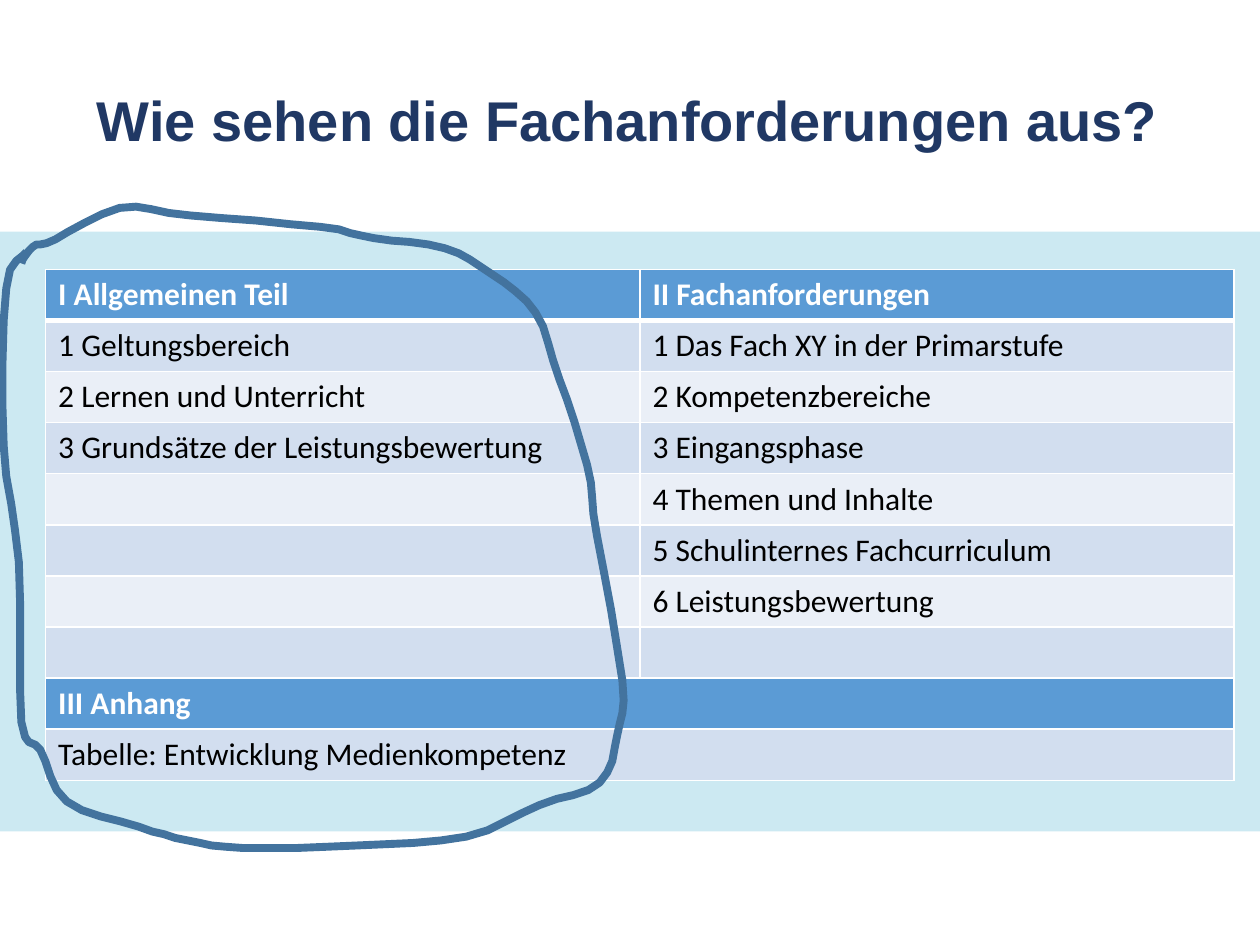
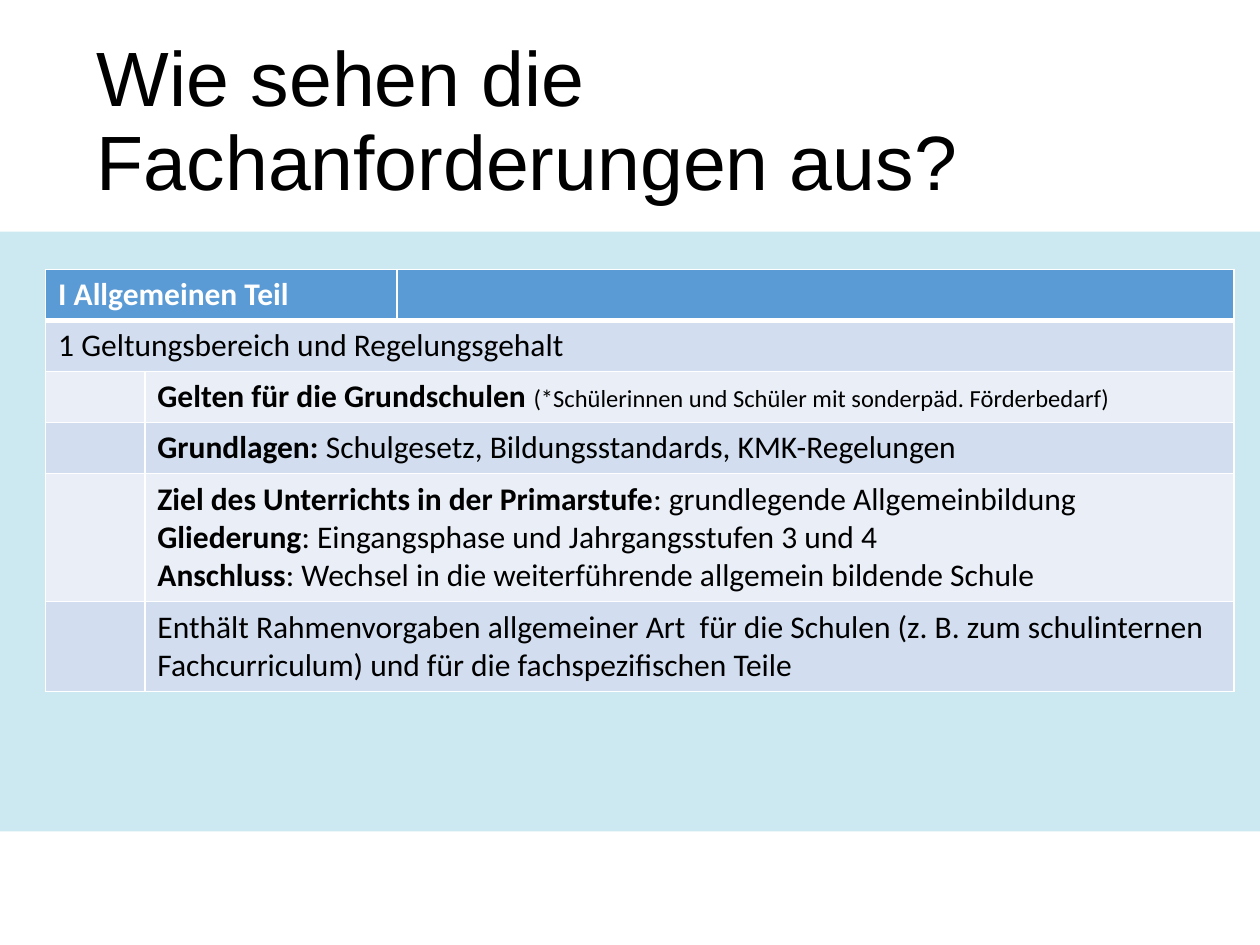
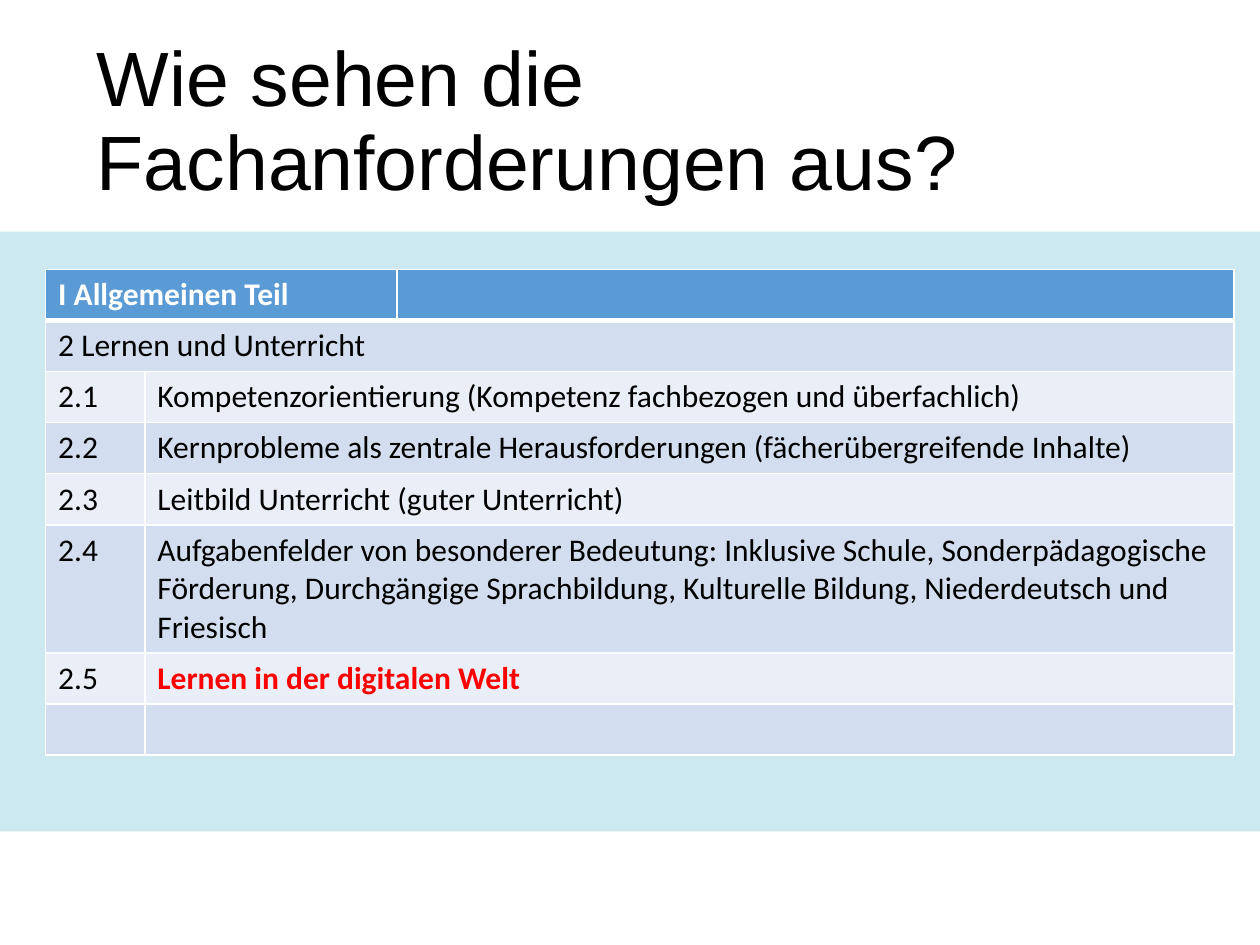
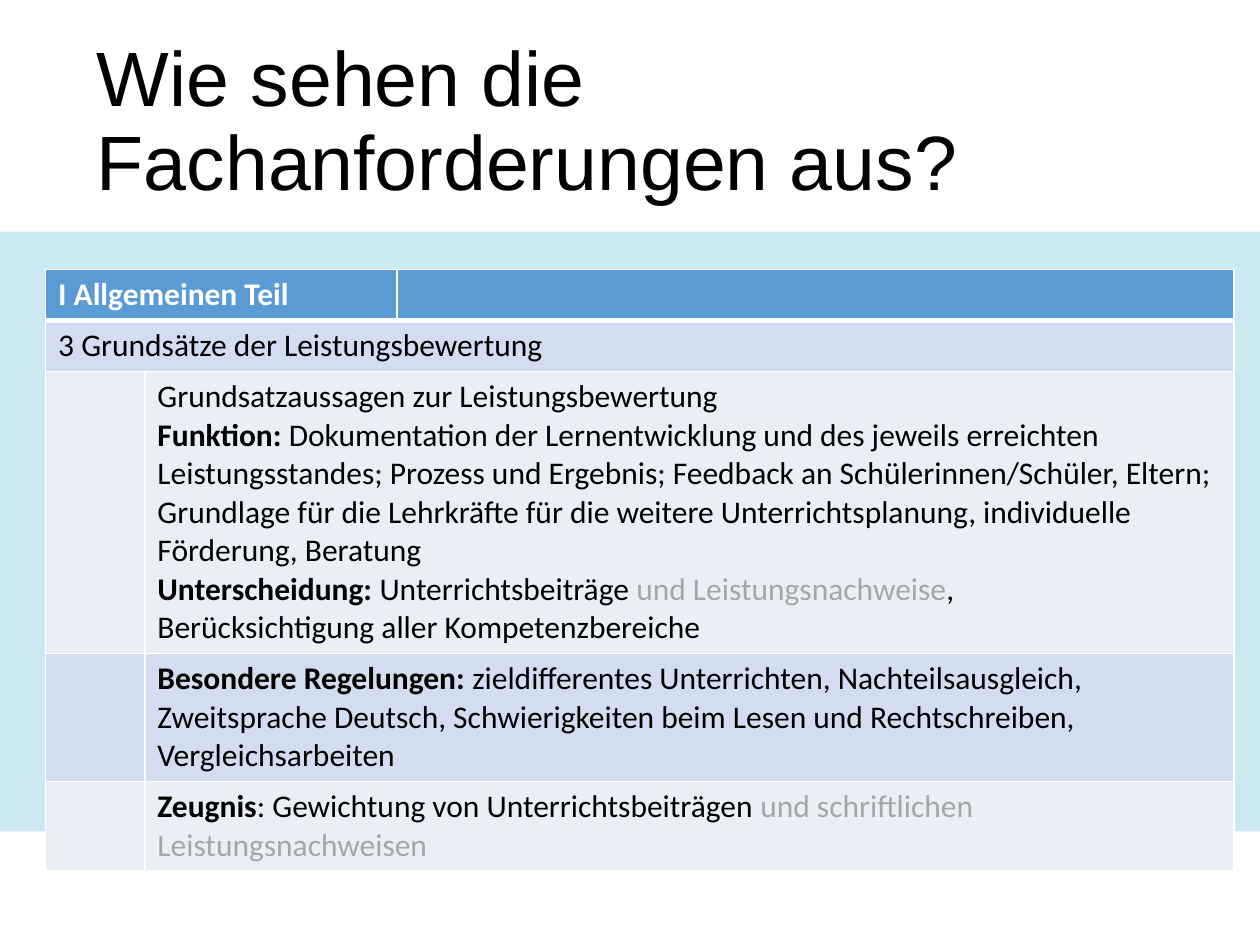
from typing import NamedTuple, Optional

from lxml.etree import SubElement
from pptx import Presentation
from pptx.dml.color import RGBColor
from pptx.enum.shapes import MSO_SHAPE as Shape
from pptx.enum.text import MSO_ANCHOR as Anchor, MSO_AUTO_SIZE as AutoSize, PP_ALIGN as Align
from pptx.oxml.ns import qn
from pptx.util import Cm, Pt

WHITE = RGBColor(0xFF, 0xFF, 0xFF)
BLACK = RGBColor(0x00, 0x00, 0x00)
NAVY = RGBColor(0x20, 0x38, 0x64)
RED = RGBColor(0xFF, 0x00, 0x00)
GREY = RGBColor(0xA6, 0xA6, 0xA6)
BAND_BLUE = RGBColor(0xCC, 0xE9, 0xF2)
HEADER_BLUE = RGBColor(0x5B, 0x9B, 0xD5)
ROW_DARK = RGBColor(0xD2, 0xDE, 0xEF)
ROW_LIGHT = RGBColor(0xEA, 0xEF, 0xF7)
PEN_BLUE = RGBColor(0x43, 0x73, 0x9E)

TITLE = "Wie sehen die Fachanforderungen aus?"
PART_ONE = "I Allgemeinen Teil"
HALVES = (11.98, 11.98)
OUTLINE = (2, 5.08, 16.88)
ROW_HEIGHT = 1.03


class Span(NamedTuple):
    text: str
    bold: bool = False
    color: Optional[RGBColor] = None
    size: float = 18


def bold(text, color=None):
    return Span(text, True, color)


def smooth_curve(points, steps=4):
    """Run a Catmull-Rom spline through the points."""
    padded = [points[0], *points, points[-1]]
    curve = [points[0]]
    for quad in zip(padded, padded[1:], padded[2:], padded[3:]):
        for step in range(1, steps + 1):
            t = step / steps
            curve.append(tuple(
                b + t / 2 * (c - a + t * (2 * a - 5 * b + 4 * c - d + t * (3 * (b - c) + d - a)))
                for a, b, c, d in zip(*quad)))
    return curve


class Deck:
    def __init__(self):
        self.deck = Presentation()
        self.deck.slide_width, self.deck.slide_height = Cm(25.4), Cm(19.05)
        self.layout = self.deck.slide_layouts[5]
        self.page = None
        title = self.layout.placeholders[0]
        title.left, title.top, title.width, title.height = Cm(1.7), Cm(0.64), Cm(22), Cm(3.7)

    def add_page(self, size=44, color=BLACK, is_bold=False):
        self.page = self.deck.slides.add_slide(self.layout)
        if len(self.deck.slides) == 1:
            self.move_band_to_layout()
        frame = self.page.shapes.title.text_frame
        frame.word_wrap = True
        frame.auto_size = AutoSize.NONE
        frame.vertical_anchor = Anchor.MIDDLE
        para = frame.paragraphs[0]
        para.alignment = Align.LEFT
        para.line_spacing = 0.9
        self.add_span(para, Span(TITLE, is_bold, color, size), "Arial", color)

    def move_band_to_layout(self):
        """Draw the band on the first page, then hand it to the layout all pages share."""
        band = self.page.shapes.add_shape(Shape.RECTANGLE, 0, Cm(4.67), Cm(25.4), Cm(12.09))
        band.shadow.inherit = False
        band.fill.solid()
        band.fill.fore_color.rgb = BAND_BLUE
        band.line.fill.background()
        self.layout.shapes.element.insert(2, band.element)

    def add_span(self, para, span, font_name, color):
        run = para.add_run()
        run.text = span.text.rstrip("\n")
        run.font.name = font_name
        run.font.size = Pt(span.size)
        run.font.bold = span.bold
        run.font.color.rgb = span.color or color
        if span.text.endswith("\n"):
            para.add_line_break()

    def fill_cell(self, cell, content, is_header):
        """Content is plain text or a list of paragraphs, each a list of spans."""
        if isinstance(content, str):
            content = [[Span(content, is_header)]] if content else []
        frame = cell.text_frame
        for number, spans in enumerate(content):
            para = frame.add_paragraph() if number else frame.paragraphs[0]
            for span in spans:
                self.add_span(para, span, "Calibri", WHITE if is_header else BLACK)

    def add_table(self, widths, rows, height, headers=(0,)):
        """A None in a row joins that cell to the one on its left."""
        frame = self.page.shapes.add_table(
            len(rows), len(widths), Cm(0.92), Cm(5.43), Cm(sum(widths)), Cm(height))
        table = frame.table
        for column, width in zip(table.columns, widths):
            column.width = Cm(width)
        for r, row in enumerate(rows):
            table.rows[r].height = Cm(ROW_HEIGHT)
            is_header = r in headers
            for c, content in enumerate(row):
                cell = table.cell(r, c)
                cell.fill.solid()
                cell.fill.fore_color.rgb = (
                    HEADER_BLUE if is_header else ROW_DARK if r % 2 else ROW_LIGHT)
                if content is None:
                    continue
                last = c
                while last + 1 < len(row) and row[last + 1] is None:
                    last += 1
                if last > c:
                    cell.merge(table.cell(r, last))
                self.fill_cell(cell, content, is_header)
        frame.height = Cm(height)
        self.draw_borders(frame, len(widths))

    def draw_borders(self, frame, column_count):
        for number, properties in enumerate(frame.element.iter(qn("a:tcPr"))):
            row = number // column_count
            for place, side in enumerate("LRTB"):
                is_thick = (row, side) in ((0, "B"), (1, "T"))
                line = SubElement(properties, qn(f"a:ln{side}"), w=str(Pt(3 if is_thick else 1)))
                fill = SubElement(line, qn("a:solidFill"))
                SubElement(fill, qn("a:srgbClr"), val=str(WHITE))
                properties.insert(place, line)

    def add_pen_stroke(self, points):
        """Points are in hundredths of an inch."""
        curve = smooth_curve(points)
        builder = self.page.shapes.build_freeform(*curve[0], scale=Cm(0.0254))
        builder.add_line_segments(curve[1:], close=False)
        stroke = builder.convert_to_shape()
        stroke.shadow.inherit = False
        stroke.fill.background()
        stroke.line.color.rgb = PEN_BLUE
        stroke.line.width = Pt(4.5)


LOOP = [
    (17, 209), (26, 196), (44, 190), (95, 165), (151, 171), (254, 180), (297, 189),
    (353, 197), (391, 218), (425, 248), (444, 301), (466, 369), (474, 426), (494, 540),
    (490, 583), (476, 621), (428, 639), (370, 664), (283, 671), (193, 673), (149, 667),
    (110, 656), (53, 636), (32, 595), (17, 573), (15, 446), (3, 354), (5, 229), (21, 200),
]


def build_overview(deck):
    deck.add_page(32, NAVY, True)
    deck.add_table(HALVES, [
        [PART_ONE, "II Fachanforderungen"],
        ["1 Geltungsbereich", "1 Das Fach XY in der Primarstufe"],
        ["2 Lernen und Unterricht", "2 Kompetenzbereiche"],
        ["3 Grundsätze der Leistungsbewertung", "3 Eingangsphase"],
        ["", "4 Themen und Inhalte"],
        ["", "5 Schulinternes Fachcurriculum"],
        ["", "6 Leistungsbewertung"],
        ["", ""],
        ["III Anhang", None],
        ["Tabelle: Entwicklung Medienkompetenz", None],
    ], 10.3, headers=(0, 8))
    deck.add_pen_stroke(LOOP)


def build_chapter(deck, heading, entries, height):
    """A page of part one: a heading row, then rows of number and content."""
    deck.add_page()
    rows = [[PART_ONE, None, ""], [heading, None, None]]
    rows += [[number, content, None] for number, content in entries]
    deck.add_table(OUTLINE, rows, height)


SCOPE = [
    ("", [[bold("Gelten für die Grundschulen "),
           Span("(*Schülerinnen und Schüler mit sonderpäd. Förderbedarf)", size=14)]]),
    ("", [[bold("Grundlagen: "), Span("Schulgesetz, Bildungsstandards, KMK-Regelungen")]]),
    ("", [[bold("Ziel des Unterrichts in der Primarstufe"),
           Span(": grundlegende Allgemeinbildung "),
           bold("Gliederung"), Span(": Eingangsphase und Jahrgangsstufen 3 und 4\n"),
           bold("Anschluss"),
           Span(": Wechsel in die weiterführende allgemein bildende Schule")]]),
    ("", "Enthält Rahmenvorgaben allgemeiner Art  für die Schulen (z. B. zum schulinternen "
         "Fachcurriculum) und für die fachspezifischen Teile"),
]

LEARNING = [
    ("2.1", "Kompetenzorientierung (Kompetenz fachbezogen und überfachlich)"),
    ("2.2", "Kernprobleme als zentrale Herausforderungen (fächerübergreifende Inhalte)"),
    ("2.3", "Leitbild Unterricht (guter Unterricht)"),
    ("2.4", "Aufgabenfelder von besonderer Bedeutung: Inklusive Schule, Sonderpädagogische "
            "Förderung, Durchgängige Sprachbildung, Kulturelle Bildung, Niederdeutsch und "
            "Friesisch"),
    ("2.5", [[bold("Lernen in der digitalen Welt", RED)]]),
    ("", ""),
]

ASSESSMENT = [
    ("", [[Span("Grundsatzaussagen zur Leistungsbewertung")],
          [bold("Funktion: "),
           Span("Dokumentation der Lernentwicklung und des jeweils erreichten "
                "Leistungsstandes; Prozess und Ergebnis; Feedback an Schülerinnen/Schüler, "
                "Eltern; Grundlage für die Lehrkräfte für die weitere Unterrichtsplanung, "
                "individuelle Förderung, Beratung\n"),
           bold("Unterscheidung: "), Span("Unterrichtsbeiträge "),
           Span("und Leistungsnachweise", color=GREY), Span(",")],
          [Span("Berücksichtigung aller Kompetenzbereiche")]]),
    ("", [[bold("Besondere Regelungen: "),
           Span("zieldifferentes Unterrichten, Nachteilsausgleich, Zweitsprache Deutsch, "
                "Schwierigkeiten beim Lesen und Rechtschreiben, Vergleichsarbeiten")]]),
    ("", [[bold("Zeugnis"), Span(": Gewichtung von Unterrichtsbeiträgen "),
           Span("und schriftlichen Leistungsnachweisen", color=GREY)]]),
]


def main():
    deck = Deck()
    build_overview(deck)
    build_chapter(deck, "1 Geltungsbereich und Regelungsgehalt", SCOPE, 8.43)
    build_chapter(deck, "2 Lernen und Unterricht", LEARNING, 9.75)
    build_chapter(deck, "3 Grundsätze der Leistungsbewertung", ASSESSMENT, 11.96)
    deck.deck.save("out.pptx")


if __name__ == "__main__":
    main()
